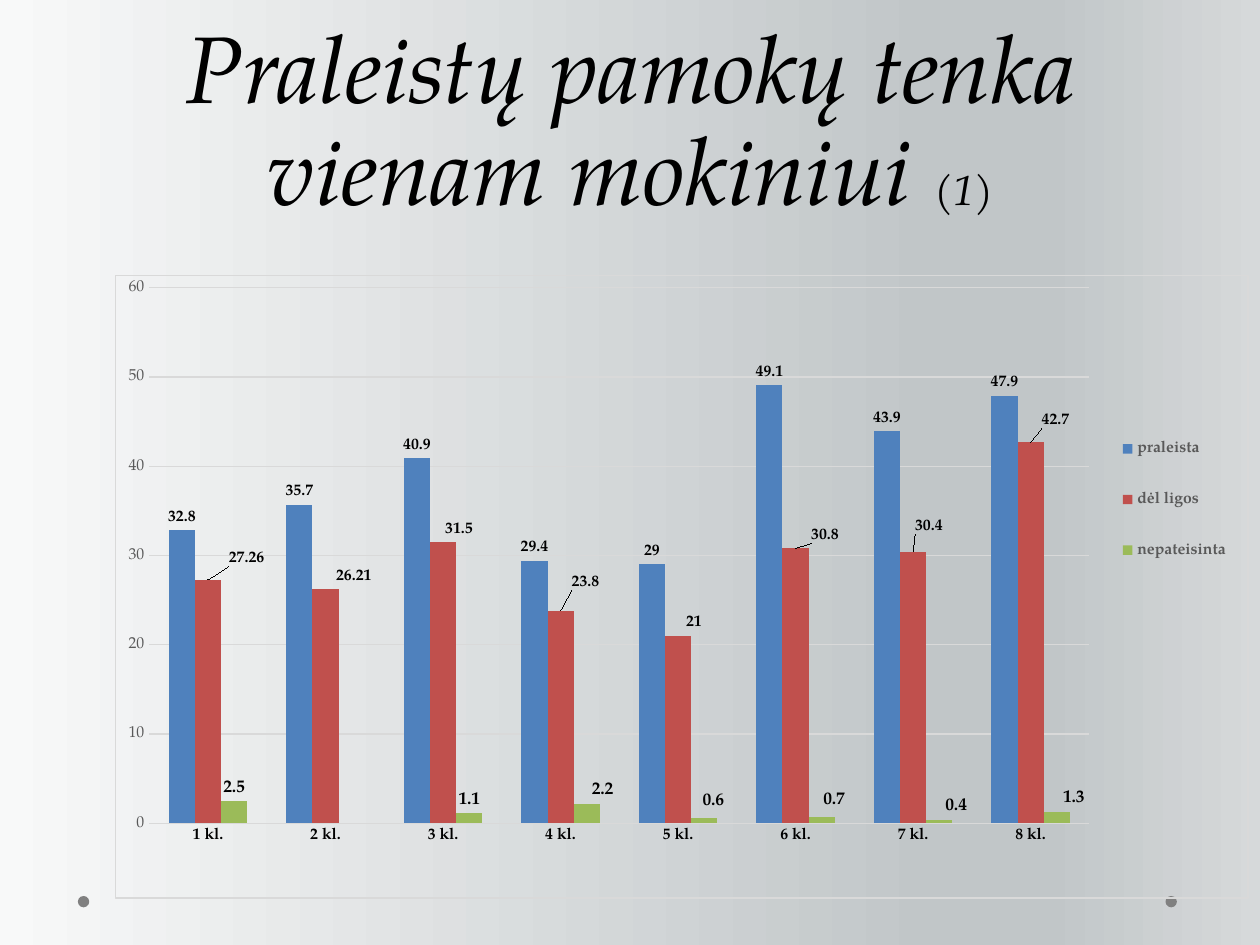
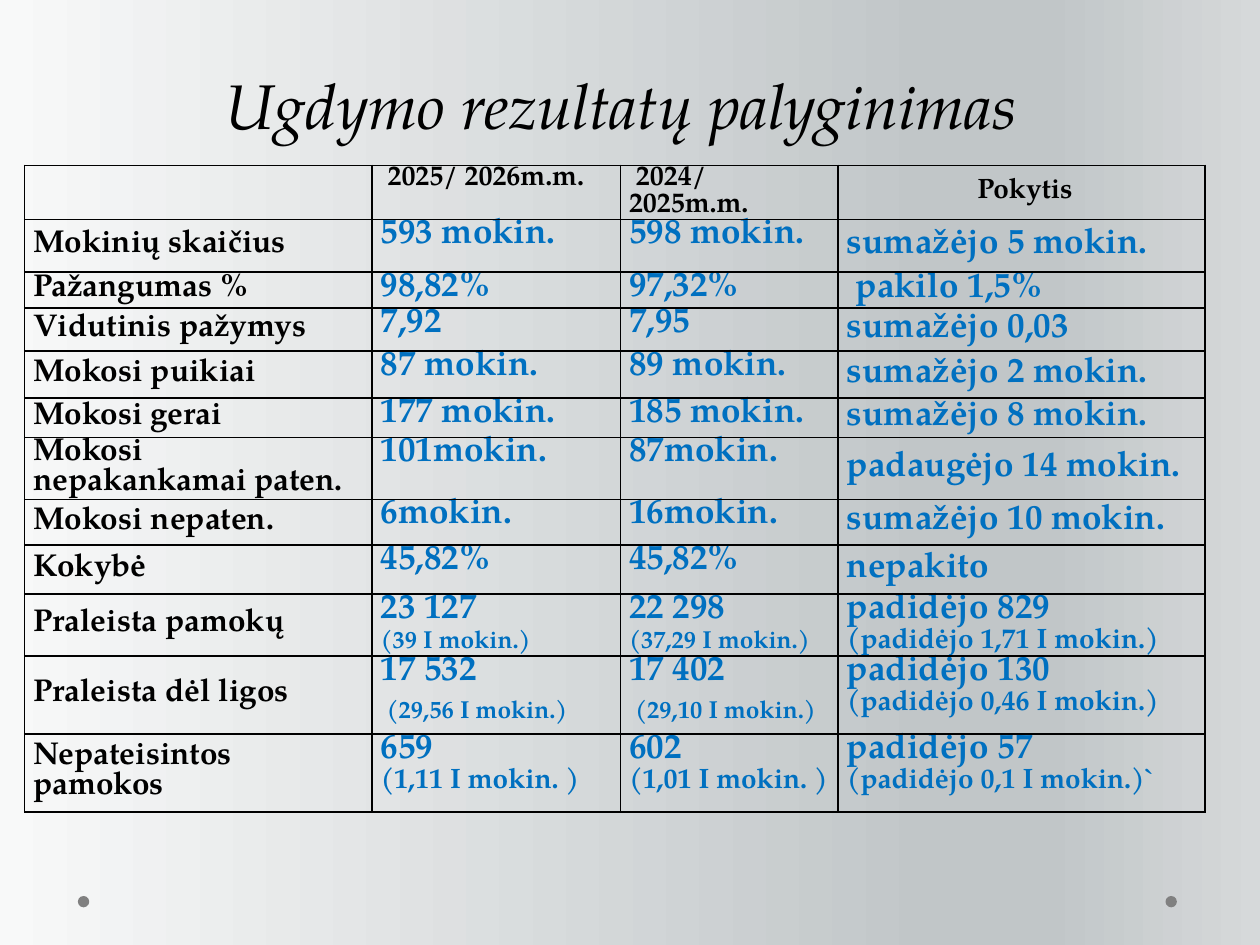
"""Two slides on missed lessons and on learning results, built with python-pptx."""
import pptx
import pptx.chart.data
import pptx.dml.color
import pptx.enum.chart
import pptx.enum.shapes
import pptx.enum.text
import pptx.oxml
import pptx.oxml.ns
import pptx.util
from lxml import etree

Pt = pptx.util.Pt
qn = pptx.oxml.ns.qn
ANCHOR = pptx.enum.text.MSO_ANCHOR

FONT = "TeX Gyre Pagella"
BLACK, GREY, BLUE, RULE, DOT = "000000", "595959", "0070C0", "D9D9D9", "808080"
BACKGROUND = [(0, "F8F9F9"), (74, "C1C6C8"), (83, "C1C6C8"), (100, "D6D9DA")]
DOT_LEFTS, DOT_TOP, DOT_SIZE = (44.5, 666), 512, 6.5

MISSED_TITLE = [("Praleistų pamokų tenka vienam mokiniui ", 54), ("(1)", 24)]
MISSED_TITLE_BOX = (36.5, 15, 648, 113)
CLASSES = [f"{n} kl." for n in range(1, 9)]
CHART_BOX = (65.5, 157, 648, 356.5)
PLOT = (0.03, 0.02, 0.83, 0.86)
LEGEND = (0.88, 0.21, 0.11, 0.3)
SERIES = [
    {"name": "praleista", "color": "4F81BD", "size": 9, "shifts": [],
     "values": [32.8, 35.7, 40.9, 29.4, 29, 49.1, 43.9, 47.9]},
    {"name": "dėl ligos", "color": "C0504D", "size": 9,
     "values": [27.26, 26.21, 31.5, 23.8, 21, 30.8, 30.4, 42.7],
     "shifts": [(22, -5), (16, 0), (9, 0), (14, -9), (9, 0), (17, 0), (9, -7), (14, -5)]},
    {"name": "nepateisinta", "color": "9BBB59", "size": 10,
     "values": [2.5, None, 1.1, 2.2, 0.6, 0.7, 0.4, 1.3],
     "shifts": [None, None, None, (9, 0), (5, -2), (7, -2), (10, 0), (10, 0)]},
]

RESULTS_TITLE = [("Ugdymo rezultatų palyginimas", 36)]
RESULTS_TITLE_BOX = (31, 21, 648, 60)
TABLE_LEFT, TABLE_TOP = 14, 94.5
COLUMN_WIDTHS = [198.5, 142, 124.5, 209.5]
ROWS = [
    (31, "", " 2025/ 2026m.m.", " 2024/ 2025m.m.", " Pokytis"),
    (30, "Mokinių skaičius", "593 mokin.", "598 mokin.", "sumažėjo 5 mokin."),
    (20.5, "Pažangumas %", "98,82%", "97,32%", " pakilo 1,5%"),
    (24.5, "Vidutinis pažymys", "7,92", "7,95", "sumažėjo 0,03"),
    (27, "Mokosi puikiai", "87 mokin.", "89 mokin.", "sumažėjo 2 mokin."),
    (22.5, "Mokosi gerai", "177 mokin.", "185 mokin.", "sumažėjo 8 mokin."),
    (35.5, "Mokosi nepakankamai paten.", "101mokin.", "87mokin.", "padaugėjo 14 mokin."),
    (26, "Mokosi nepaten.", "6mokin.", "16mokin.", "sumažėjo 10 mokin."),
    (28, "Kokybė", "45,82%", "45,82%", "nepakito"),
    (35.5, "Praleista pamokų", "23 127\n(39 I mokin.)", "22 298\n(37,29 I mokin.)",
     "padidėjo 829\n(padidėjo 1,71 I mokin.)"),
    (44.5, "Praleista dėl ligos", "17 532\n (29,56 I mokin.)", "17 402\n (29,10 I mokin.)",
     "padidėjo 130\n(padidėjo 0,46 I mokin.)"),
    (44.5, "Nepateisintos pamokos", "659\n(1,11 I mokin. )", "602\n(1,01 I mokin. )",
     "padidėjo 57\n(padidėjo 0,1 I mokin.)`"),
]


def rgb(value):
    return pptx.dml.color.RGBColor.from_string(value)


def style(font, size, color, bold=False, italic=False):
    font.name, font.size, font.bold, font.italic = FONT, Pt(size), bold, italic
    font.color.rgb = rgb(color)


def box(values):
    return [Pt(v) for v in values]


def xml(text):
    names = pptx.oxml.ns.nsdecls("a", "c")
    return pptx.oxml.parse_xml(text.replace(">", f" {names}>", 1))


def set_background(prs):
    master = prs.slide_master
    fill = master.background.fill
    fill.gradient()
    fill.gradient_angle = 0
    stops = master.element.find(".//" + qn("p:bg")).find(".//" + qn("a:gsLst"))
    for stop in list(stops):
        stops.remove(stop)
    for percent, color in BACKGROUND:
        stop = etree.SubElement(stops, qn("a:gs"), pos=str(percent * 1000))
        etree.SubElement(stop, qn("a:srgbClr"), val=color)


def new_slide(prs, title, title_box):
    s = prs.slides.add_slide(prs.slide_layouts[5])
    for left in DOT_LEFTS:
        dot = s.shapes.add_shape(pptx.enum.shapes.MSO_SHAPE.OVAL,
                                 *box((left, DOT_TOP, DOT_SIZE, DOT_SIZE)))
        dot.shadow.inherit = False
        dot.fill.solid()
        dot.fill.fore_color.rgb = rgb(DOT)
        dot.line.fill.background()
    sp = s.shapes.title
    sp.left, sp.top, sp.width, sp.height = box(title_box)
    tf = sp.text_frame
    tf.auto_size = pptx.enum.text.MSO_AUTO_SIZE.NONE
    tf.word_wrap, tf.vertical_anchor, tf.margin_bottom = True, ANCHOR.BOTTOM, 0
    p = tf.paragraphs[0]
    p.alignment, p.line_spacing = pptx.enum.text.PP_ALIGN.CENTER, Pt(58)
    for text, size in title:
        r = p.add_run()
        r.text = text
        style(r.font, size, BLACK, italic=True)
    return s


def set_layout(parent, index, values, edge=False):
    for old in parent.findall(qn("c:layout")):
        parent.remove(old)
    parts = '<c:layoutTarget val="inner"/>' if parent.tag == qn("c:plotArea") else ""
    if edge:
        parts += '<c:xMode val="edge"/><c:yMode val="edge"/>'
    parts += "".join(f'<c:{k} val="{v:.3f}"/>' for k, v in zip("xywh", values))
    parent.insert(index, xml(f"<c:layout><c:manualLayout>{parts}</c:manualLayout></c:layout>"))


def format_axis(axis, color, bold):
    axis.major_tick_mark = axis.minor_tick_mark = pptx.enum.chart.XL_TICK_MARK.NONE
    axis.format.line.fill.background()
    style(axis.tick_labels.font, 9, color, bold)


def label_series(ser, row):
    outside = pptx.enum.chart.XL_LABEL_POSITION.OUTSIDE_END
    labels = ser.data_labels
    labels.show_value, labels.position = True, outside
    style(labels.font, row["size"], BLACK, True)
    for i, shift in enumerate(row["shifts"]):
        if shift:
            label = ser.points[i].data_label
            label.position = outside
            style(label.font, row["size"], BLACK, True)
    shifts = [shift for shift in row["shifts"] if shift]
    for item, (dx, dy) in zip(ser._element.iter(qn("c:dLbl")), shifts):
        set_layout(item, 1, (dx / CHART_BOX[2], dy / CHART_BOX[3]))


def add_missed_chart(s):
    data = pptx.chart.data.CategoryChartData()
    data.categories = CLASSES
    for row in SERIES:
        data.add_series(row["name"], row["values"])
    kind = pptx.enum.chart.XL_CHART_TYPE.COLUMN_CLUSTERED
    chart = s.shapes.add_chart(kind, *box(CHART_BOX), data).chart
    chart.has_title = False
    style(chart.font, 10, BLACK)
    plot = chart.plots[0]
    plot.gap_width, plot.overlap, plot.vary_by_categories = 150, 0, False
    for ser, row in zip(plot.series, SERIES):
        ser.format.fill.solid()
        ser.format.fill.fore_color.rgb = rgb(row["color"])
        label_series(ser, row)
    format_axis(chart.category_axis, BLACK, True)
    axis = chart.value_axis
    format_axis(axis, GREY, False)
    axis.minimum_scale, axis.maximum_scale, axis.major_unit = 0, 60, 10
    axis.has_major_gridlines = True
    line = axis.major_gridlines.format.line
    line.color.rgb, line.width = rgb(RULE), Pt(0.75)
    chart.has_legend = True
    chart.legend.position = pptx.enum.chart.XL_LEGEND_POSITION.RIGHT
    chart.legend.include_in_layout = False
    style(chart.legend.font, 9, GREY, True)
    root = chart.element
    set_layout(root.find(".//" + qn("c:plotArea")), 0, PLOT, True)
    set_layout(root.find(".//" + qn("c:legend")), 1, LEGEND, True)
    root.find(qn("c:txPr")).addprevious(xml(
        f'<c:spPr><a:noFill/><a:ln w="{Pt(0.75)}"><a:solidFill><a:srgbClr val="{RULE}"/>'
        "</a:solidFill></a:ln></c:spPr>"))


def line_format(row, col, line, text):
    if row == 0:
        return 16, BLACK, 15.5
    if col == 0:
        return 18, BLACK, 17
    if line == 0:
        return 20, BLUE, 19
    size = 16 if col == 3 or row == len(ROWS) - 1 else 14
    return size, BLUE, 20 if text.startswith(" ") else 16


def fill_cell(cell, row, col, text):
    cell.margin_left = cell.margin_right = Pt(5)
    cell.margin_top = cell.margin_bottom = 0
    top = col in (1, 2) or "\n" in text
    cell.vertical_anchor = ANCHOR.TOP if top else ANCHOR.MIDDLE
    tf = cell.text_frame
    tf.text = text
    for i, p in enumerate(tf.paragraphs):
        size, color, pitch = line_format(row, col, i, p.text)
        p.line_spacing = Pt(pitch)
        if (row, col) == (0, 3):
            p.alignment = pptx.enum.text.PP_ALIGN.CENTER
        for r in p.runs:
            style(r.font, size, color, True)
    for side in "LRTB":
        cell._tc.get_or_add_tcPr().append(xml(
            f'<a:ln{side} w="{Pt(1)}"><a:solidFill><a:srgbClr val="{BLACK}"/>'
            f"</a:solidFill></a:ln{side}>"))
    cell.fill.background()


def add_results_table(s):
    size = (sum(COLUMN_WIDTHS), sum(row[0] for row in ROWS))
    table = s.shapes.add_table(len(ROWS), len(COLUMN_WIDTHS),
                               *box((TABLE_LEFT, TABLE_TOP, *size))).table
    table.first_row = table.horz_banding = False
    for column, width in zip(table.columns, COLUMN_WIDTHS):
        column.width = Pt(width)
    for i, (height, *texts) in enumerate(ROWS):
        table.rows[i].height = Pt(height)
        for j, text in enumerate(texts):
            fill_cell(table.cell(i, j), i, j, text)


def main():
    prs = pptx.Presentation()
    prs.slide_width, prs.slide_height = Pt(720), Pt(540)
    set_background(prs)
    add_missed_chart(new_slide(prs, MISSED_TITLE, MISSED_TITLE_BOX))
    add_results_table(new_slide(prs, RESULTS_TITLE, RESULTS_TITLE_BOX))
    prs.save("out.pptx")


if __name__ == "__main__":
    main()
